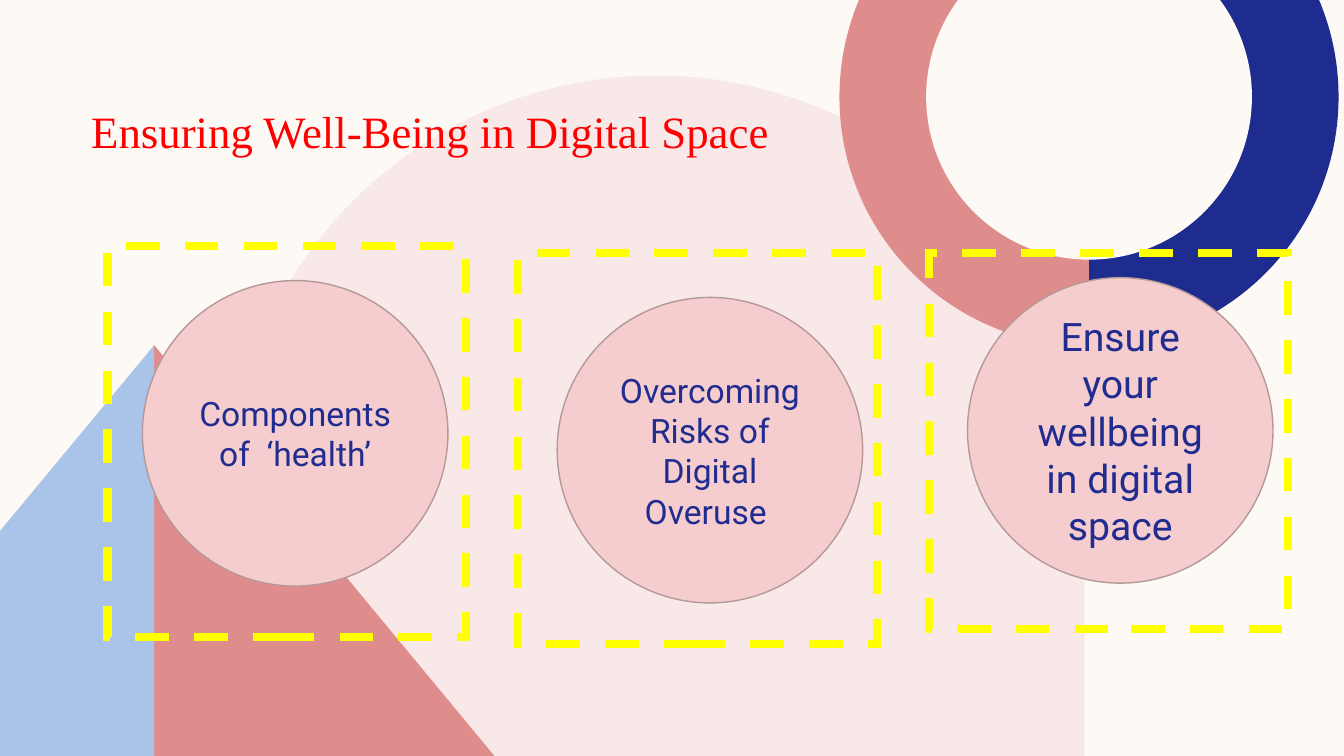
import math

import lxml.etree
import pptx
import pptx.dml.color
import pptx.enum.dml
import pptx.enum.shapes
import pptx.enum.text
import pptx.oxml.ns
import pptx.util

# The slide is a grid of square cells, 100 columns by 56.25 rows.
COLS, ROWS = 100, 56.25
CELL = pptx.util.Inches(40 / 3) / COLS

CREAM, BLUSH, ROSE, PINK = "FDFAF6", "F8E8E8", "DE8C8C", "F5CDCE"
NAVY, SKY, MAUVE, YELLOW, RED = "1F2C8F", "AAC3E8", "B59898", "FFFF00", "FF0000"

FRAME_LEFT, FRAME_PITCH, FRAME_WIDTH = 8, 30.56, 26.7
CIRCLE = 22.73
# Frame top and height, circle offset within the frame, text, font size
CARDS = [
    (18.3, 29.1, 2.6, 2.58, "Components of  ‘health’", 24),
    (18.83, 29.1, 2.9, 3.3, "Overcoming Risks of Digital Overuse ", 24),
    (18.83, 27.98, 2.87, 1.83, "Ensure your wellbeing in digital space", 28),
]


def rgb(hex_color):
    return pptx.dml.color.RGBColor.from_string(hex_color)


def cells(*values):
    """Convert grid cells to slide units."""
    return [round(v * CELL) for v in values]


def paint(sp, fill=None, line=None, width=1, dash=None):
    sp.shadow.inherit = False
    for part, color in ((sp.fill, fill), (sp.line.fill, line)):
        if color:
            part.solid()
            part.fore_color.rgb = rgb(color)
        else:
            part.background()
    if line:
        sp.line.width = pptx.util.Pt(width)
        sp.line.dash_style = dash
        ln = sp.element.find(".//" + pptx.oxml.ns.qn("a:ln"))
        lxml.etree.SubElement(ln, pptx.oxml.ns.qn("a:miter"), lim="800000")


def write(tf, text, size, font, color, align):
    tf.word_wrap = True
    p = tf.paragraphs[0]
    p.alignment = align
    r = p.add_run()
    r.text = text
    for name, value in {"size": pptx.util.Pt(size), "name": font}.items():
        setattr(r.font, name, value)
    r.font.color.rgb = rgb(color)


def arc(cx, cy, radius, *stops):
    """Start point, then three Bezier points per step between the stops.

    Stops are degrees clockwise from the right, at most 90 apart.
    """
    def at(angle, reach=0):
        a = math.radians(angle)
        return (cx + radius * (math.cos(a) - reach * math.sin(a)),
                cy + radius * (math.sin(a) + reach * math.cos(a)))

    points = [at(stops[0])]
    for start, end in zip(stops, stops[1:]):
        reach = 4 / 3 * math.tan(math.radians(end - start) / 4)
        points += [at(start, reach), at(end, -reach), at(end)]
    return points


def outline(s, fill, corners, curve=()):
    """Closed outline: a curve from arc(), if any, then straight corners."""
    points = [cells(*point) for point in [*curve, *corners]]
    builder = s.shapes.build_freeform(*points[0])
    builder.add_line_segments(points[1:], close=True)
    sp = builder.convert_to_shape()
    lines = list(sp.element.iter(pptx.oxml.ns.qn("a:lnTo")))
    for i in range(0, len(curve) - 1, 3):
        bezier = lxml.etree.Element(pptx.oxml.ns.qn("a:cubicBezTo"))
        lines[i].addprevious(bezier)
        for line in lines[i:i + 3]:
            bezier.append(line[0])
            line.getparent().remove(line)
    paint(sp, fill)


def arch(s, left, top, width, height):
    radius, right, bottom = width / 2, left + width, top + height
    outline(s, BLUSH, [(right, bottom), (left, bottom)],
            arc(left + radius, top + radius, radius, 180, 270, 360))


def ring(s, cx, cy, radius, hole):
    """Two-coloured ring cut off by the top edge of the slide."""
    cut = math.degrees(math.asin(cy / radius))
    outline(s, ROSE, [(cx, 0)], arc(cx, cy, radius, 90, 180, 180 + cut))
    outline(s, NAVY, [(cx, 0)], arc(cx, cy, radius, 90, 0, -cut))
    cut = math.degrees(math.asin(cy / hole))
    outline(s, CREAM, [], arc(cx, cy, hole, -cut, 0, 90, 180, 180 + cut))


def peak(s, left, top, width, height, ridge, shoulder):
    """Two-sided peak; ridge and shoulder are measured from left and top."""
    x, bottom = left + ridge, top + height
    outline(s, ROSE, [(x, top), (left + width, bottom), (x, bottom)])
    outline(s, SKY, [(x, top), (x, bottom), (left, bottom), (left, top + shoulder)])


def title(s, left, top, width, height):
    tb = s.shapes.add_textbox(*cells(left, top, width, height))
    write(tb.text_frame, "Ensuring Well-Being in Digital Space", 32,
          "Times New Roman", RED, pptx.enum.text.PP_ALIGN.LEFT)
    tb.text_frame.auto_size = pptx.enum.text.MSO_AUTO_SIZE.SHAPE_TO_FIT_TEXT


def card(s, left, top, width, height, dx, dy, text, size):
    """Dashed frame with a text circle at an offset inside it."""
    kinds = pptx.enum.shapes.MSO_SHAPE
    frame = s.shapes.add_shape(kinds.RECTANGLE, *cells(left, top, width, height))
    paint(frame, line=YELLOW, width=6, dash=pptx.enum.dml.MSO_LINE.DASH)
    circle = s.shapes.add_shape(kinds.OVAL, *cells(left + dx, top + dy, CIRCLE, CIRCLE))
    paint(circle, PINK, MAUVE)
    circle.text_frame.vertical_anchor = pptx.enum.text.MSO_ANCHOR.MIDDLE
    write(circle.text_frame, text, size, "Roboto", "202C8F",
          pptx.enum.text.PP_ALIGN.CENTER)


def main():
    prs = pptx.Presentation()
    prs.slide_width, prs.slide_height = cells(COLS, ROWS)
    s = prs.slides.add_slide(prs.slide_layouts[6])
    s.background.fill.solid()
    s.background.fill.fore_color.rgb = rgb(CREAM)

    arch(s, 16.93, 5.62, 63.75, 50.75)
    ring(s, 81.03, 7.2, 18.57, 12.12)
    peak(s, 0, 25.68, 36.9, 30.7, 11.47, 13.83)
    for i, (top, height, *content) in enumerate(CARDS):
        card(s, FRAME_LEFT + i * FRAME_PITCH, top, FRAME_WIDTH, height, *content)
    title(s, 6.05, 7.35, 56.18, 4.8)
    prs.save("out.pptx")


if __name__ == "__main__":
    main()
